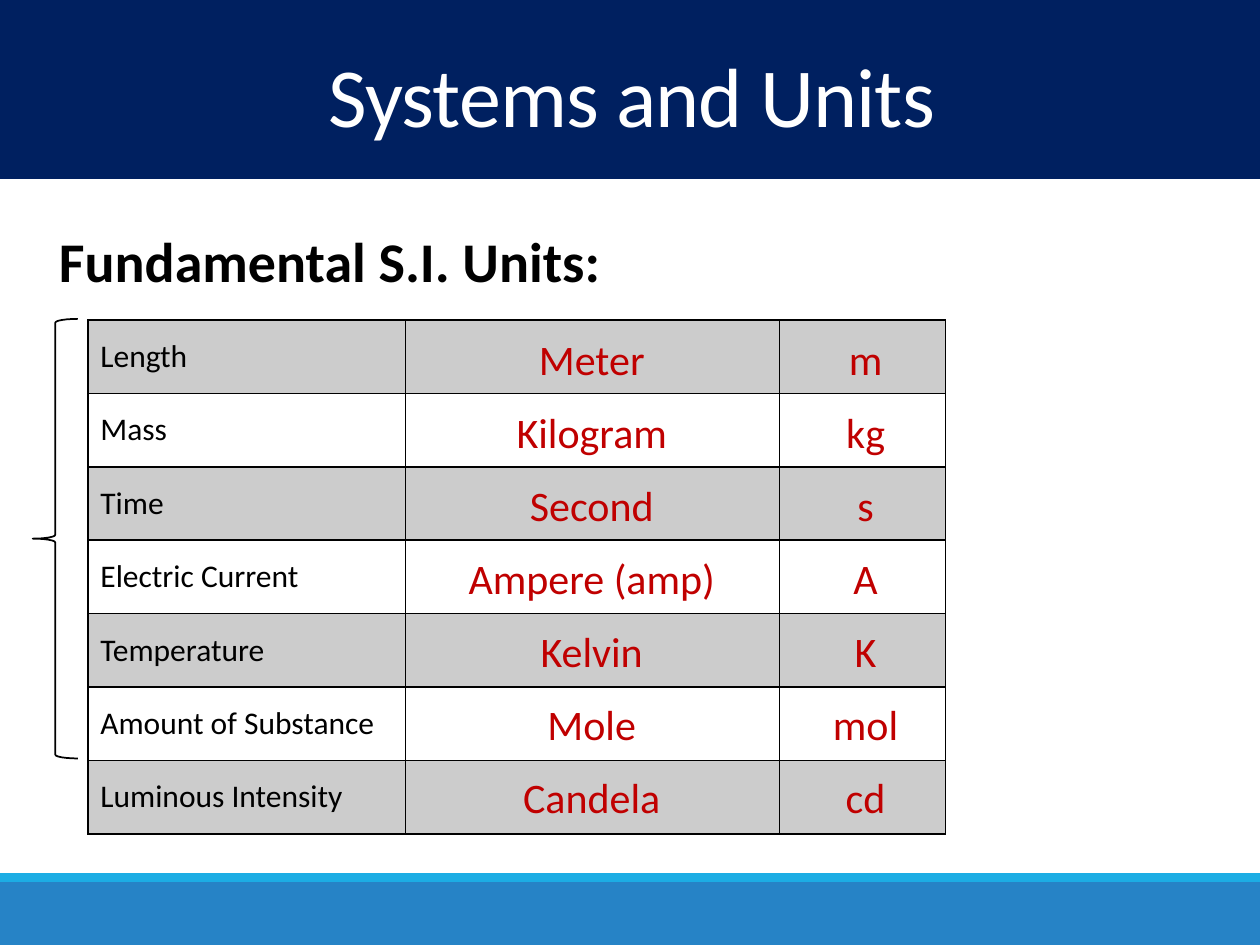
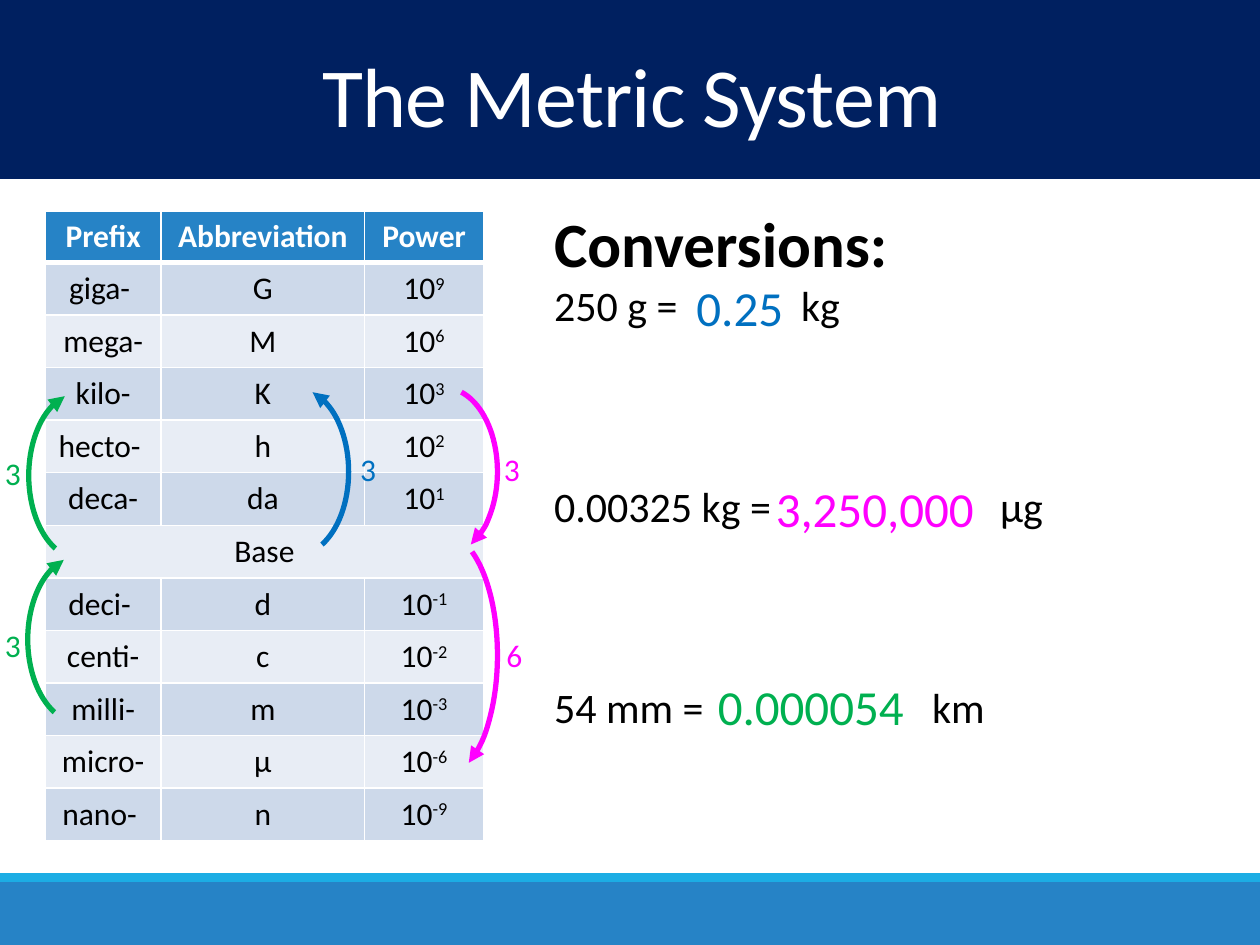
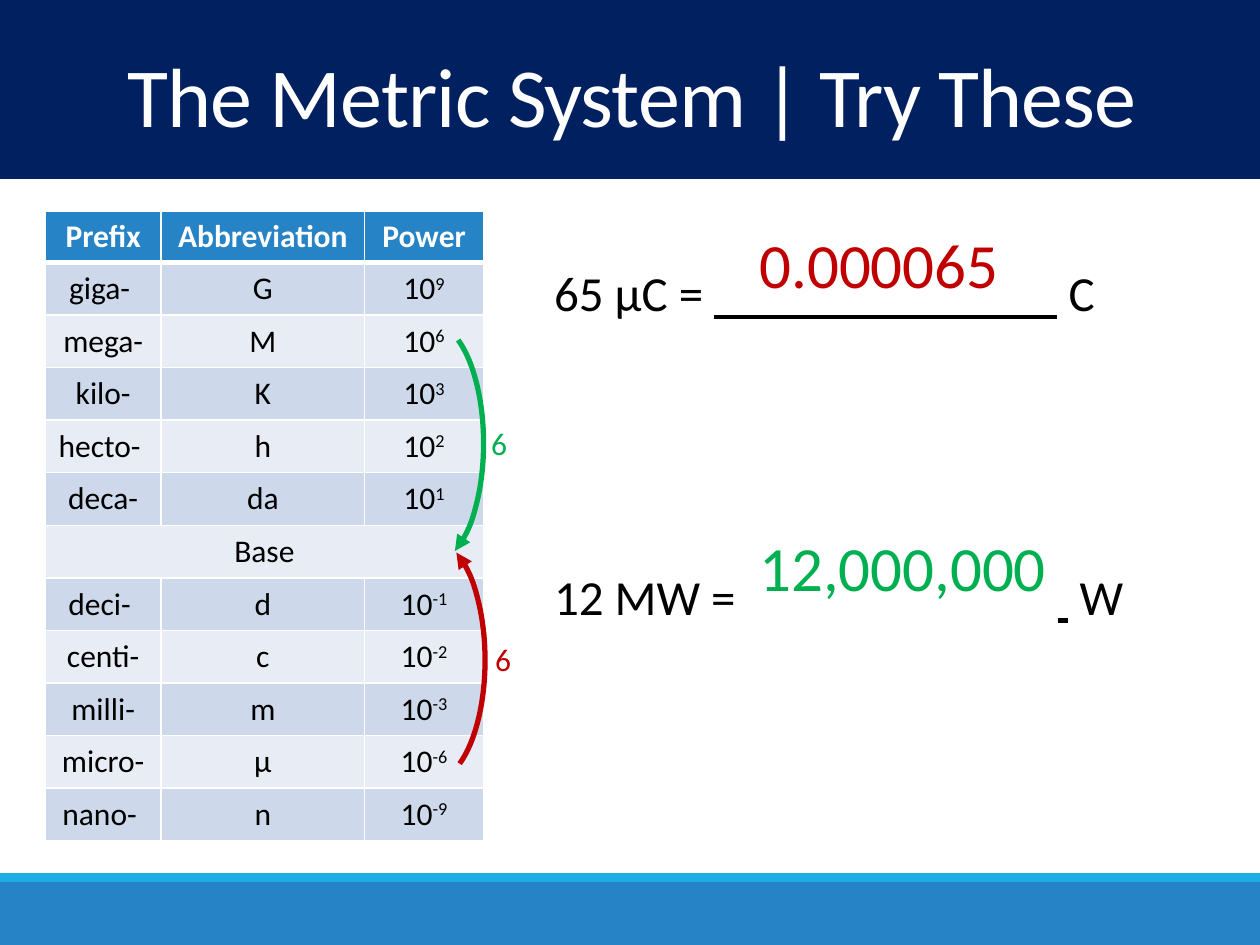
from dataclasses import dataclass

from lxml import etree
from pptx import Presentation
from pptx.dml.color import RGBColor
from pptx.enum.shapes import MSO_CONNECTOR, MSO_SHAPE
from pptx.enum.text import MSO_ANCHOR, MSO_AUTO_SIZE, PP_ALIGN
from pptx.oxml.ns import qn
from pptx.util import Cm, Pt

RECT, ARC, BRACE = MSO_SHAPE.RECTANGLE, MSO_SHAPE.ARC, MSO_SHAPE.LEFT_BRACE
STRAIGHT = MSO_CONNECTOR.STRAIGHT
LEFT, CENTER = PP_ALIGN.LEFT, PP_ALIGN.CENTER
MIDDLE = MSO_ANCHOR.MIDDLE
NO_FIT = MSO_AUTO_SIZE.NONE


@dataclass(frozen=True)
class Theme:
    font: str = "Calibri"
    navy: str = "002060"
    band: str = "2683C6"
    accent: str = "1CADE4"
    black: str = "000000"
    white: str = "FFFFFF"
    gray: str = "CCCCCC"
    row_dark: str = "CDD9EA"
    row_light: str = "E8EDF5"
    red: str = "C00000"
    blue: str = "0070C0"
    magenta: str = "FF00FF"
    green: str = "00B050"
    title: int = 48
    large: int = 36
    heading: int = 32
    equation: int = 28
    body: int = 24
    small: int = 18


T = Theme()


def write(p, text, size=T.small, color=T.black, bold=False, underline=False, **attrs):
    """Add a run to p; attrs are raw run attributes such as spc or baseline."""
    r = p.add_run()
    r.text = text
    r.font.name, r.font.size = T.font, Pt(size)
    r.font.bold, r.font.underline = bold, underline
    r.font.color.rgb = RGBColor.from_string(color)
    for name, value in attrs.items():
        r.font._element.set(name, value)


def add_text(slide, text, left, top, width, height, align=LEFT, **fmt):
    """Add a text box, sizes in centimetres, and return its text frame."""
    tf = slide.shapes.add_textbox(Cm(left), Cm(top), Cm(width), Cm(height)).text_frame
    tf.word_wrap = False
    p = tf.paragraphs[0]
    p.alignment = align
    write(p, text, **fmt)
    return tf


prs = Presentation()
prs.slide_width, prs.slide_height = Cm(25.4), Cm(19.05)
title_only = prs.slide_layouts[5]

# Slides and titles
slides = []
for title in ("Systems and Units", "The Metric System", "The Metric System | Try These"):
    slide = prs.slides.add_slide(title_only)
    sp = slide.shapes.title
    sp.left, sp.top, sp.width, sp.height = Cm(0.08), Cm(0.99), Cm(25.32), Cm(2.13)
    tf = sp.text_frame
    tf.auto_size, tf.vertical_anchor = NO_FIT, MIDDLE
    p = tf.paragraphs[0]
    p.alignment, p.line_spacing = CENTER, 0.85
    write(p, title, size=T.title, color=T.white, spc="-50")
    slides.append(slide)
units, metric, practice = slides

# Shared bands belong to the master, behind its placeholders
for i, (top, height, color) in enumerate(((17.78, 1.27, T.band), (17.6, 0.18, T.accent),
                                          (0, 3.61, T.navy))):
    sp = units.shapes.add_shape(RECT, 0, Cm(top), prs.slide_width, Cm(height))
    sp.shadow.inherit = False
    sp.fill.solid()
    sp.fill.fore_color.rgb = RGBColor.from_string(color)
    sp.line.fill.background()
    prs.slide_master.element.cSld.spTree.insert(2 + i, sp.element)

# Tables
# Each base unit: quantity, unit, unit width, symbol, symbol width
BASE_UNITS = [
    ("Length", "Meter", 2.77, "m", 1.24),
    ("Mass", "Kilogram", 3.91, "kg", 1.45),
    ("Time", "Second", 3.3, "s", 0.86),
    ("Electric Current", "Ampere (amp)", 5.92, "A", 1.07),
    ("Temperature", "Kelvin", 2.77, "K", 1.02),
    ("Amount of Substance", "Mole", 2.44, "mol", 1.96),
    ("Luminous Intensity", "Candela", 3.56, "cd", 1.42),
]
PREFIXES = [
    ("Prefix", "Abbreviation", "Power"),
    ("giga- ", "G", "10^9"), ("mega-", "M", "10^6"), ("kilo-", "K", "10^3"),
    ("hecto- ", "h", "10^2"), ("deca-", "da", "10^1"), ("Base",),
    ("deci- ", "d", "10^-1"), ("centi-", "c", "10^-2"), ("milli-", "m", "10^-3"),
    ("micro-", "μ", "10^-6"), ("nano- ", "n", "10^-9"),
]
quantities = [(row[0], "", "") for row in BASE_UNITS]
unit_grid = (quantities, 1.77, 6.45, (6.4, 7.54, 3.35), 1.48, LEFT, T.black,
             (T.gray, None), False)
prefix_grid = (PREFIXES, 0.91, 4.26, (2.34, 4.1, 2.4), 1.06, CENTER, T.white,
               (T.row_light, T.row_dark), True)

for slide, grid in ((units, unit_grid), (metric, prefix_grid), (practice, prefix_grid)):
    rows, left, top, widths, row_height, align, border, fills, has_header = grid
    table = slide.shapes.add_table(len(rows), len(widths), Cm(left), Cm(top),
                                   Cm(sum(widths)), Cm(row_height * len(rows))).table
    table.first_row = table.horz_banding = False
    for column, width in zip(table.columns, widths):
        column.width = Cm(width)
    for i, row in enumerate(rows):
        header = has_header and i == 0
        table.rows[i].height = Cm(row_height - 0.03 * header)
        fill = T.band if header else fills[i % 2]
        for j in range(len(widths)):
            cell = table.cell(i, j)
            cell.vertical_anchor = MIDDLE
            tcPr = cell._tc.get_or_add_tcPr()
            for side in ("lnL", "lnR", "lnT", "lnB"):
                weight = 3 if header and side == "lnB" else 1
                ln = etree.SubElement(tcPr, qn("a:" + side), w=str(Pt(weight)))
                solid = etree.SubElement(ln, qn("a:solidFill"))
                etree.SubElement(solid, qn("a:srgbClr"), val=border)
            if fill:
                cell.fill.solid()
                cell.fill.fore_color.rgb = RGBColor.from_string(fill)
            else:
                cell.fill.background()
        for j, text in enumerate(row):
            if not text:
                continue
            p = table.cell(i, j).text_frame.paragraphs[0]
            p.alignment = align
            base, _, power = text.partition("^")
            write(p, base, color=T.white if header else T.black, bold=header)
            if power:
                write(p, power, baseline="30000")
        if len(row) == 1:
            table.cell(i, 0).merge(table.cell(i, len(widths) - 1))

# Slide 1: heading, brace, units and symbols centred on their columns
add_text(units, "Fundamental S.I. Units:", 0.94, 4.45, 11.53, 1.63,
         size=T.heading, bold=True)
brace = units.shapes.add_shape(BRACE, Cm(0.66), Cm(6.43), Cm(0.91), Cm(8.86))
brace.shadow.inherit = False
brace.fill.background()
brace.line.width = Pt(1)
brace.line.color.rgb = RGBColor.from_string(T.black)
for i, (_, unit, unit_width, symbol, symbol_width) in enumerate(BASE_UNITS):
    for text, center, width in ((unit, 11.93, unit_width), (symbol, 17.45, symbol_width)):
        add_text(units, text, center - width / 2, 6.6 + 1.47 * i, width, 1.28,
                 align=CENTER, size=T.body, color=T.red)

# Slide 2: conversions, with a tab stop where each unit follows its answer
tf = add_text(metric, "Conversions:", 10.92, 3.99, 12.85, 14.1, size=T.large, bold=True)
tf.word_wrap = True
tabbed = []
for text, gap, tab in (("250 g =\tkg", 0, 4.98), ("0.00325 kg =\tμg", 86, 8.99),
                       ("54 mm =\tkm", 86, 7.62)):
    p = tf.add_paragraph()
    p.space_before = Pt(gap)
    write(p, text, size=T.body)
    tabbed.append((p, tab))

# Slide 3: equations with blanks
blank_end = 10.15
for text, unit, top in (("65 μC =\t", " C", 3.99), ("12 MW =\t", " W", 10.11)):
    p = add_text(practice, text, 10.92, top, 13.87, 2.31, size=T.equation).paragraphs[0]
    p.line_spacing = 2.0
    if unit == " W":
        write(p, " ", size=T.equation, underline=True)
    write(p, unit, size=T.equation)
    tabbed.append((p, blank_end))
blank = practice.shapes.add_connector(STRAIGHT, Cm(14.39), Cm(6.39), Cm(21.31), Cm(6.39))
blank.line.width = Pt(2.25)
blank.line.color.rgb = RGBColor.from_string(T.black)
etree.SubElement(blank.element.spPr, qn("a:effectLst"))

for p, tab in tabbed:
    tabs = etree.SubElement(p._p.get_or_add_pPr(), qn("a:tabLst"))
    etree.SubElement(tabs, qn("a:tab"), pos=str(Cm(tab)), algn="l")

# Answers
for slide, text, left, top, width, height, size, color in (
        (metric, "0.25", 13.79, 5.46, 2.34, 1.45, T.equation, T.blue),
        (metric, "3,250,000", 15.39, 9.53, 4.72, 1.45, T.equation, T.magenta),
        (metric, "0.000054", 14.22, 13.51, 4.5, 1.45, T.equation, T.green),
        (practice, "0.000065", 15.06, 4.42, 5.61, 1.8, T.large, T.red),
        (practice, "12,000,000", 15.06, 10.52, 6.58, 1.8, T.large, T.green)):
    add_text(slide, text, left, top, width, height, size=size, color=color)

# Curved arrows over the prefix table, each with its number of decimal places
SHORT = (3.38, 281.9, 70.26)   # height, start and end angle in degrees
LONG = (4.88, 284.85, 77.34)
for slide, color, left, top, arc, arrow, flip, places, label_left, label_top in (
        (metric, T.blue, 4.9, 7.82, SHORT, "headEnd", None, "3", 7.01, 8.94),
        (metric, T.magenta, 7.9, 7.82, SHORT, "tailEnd", None, "3", 9.91, 8.94),
        (metric, T.magenta, 7.9, 10.77, LONG, "tailEnd", None, "6", 9.96, 12.7),
        (metric, T.green, 0.58, 7.9, SHORT, "headEnd", "flipH", "3", -0.15, 9.02),
        (metric, T.green, 0.56, 11.2, SHORT, "headEnd", "flipH", "3", -0.15, 12.5),
        (practice, T.green, 7.62, 6.5, LONG, "tailEnd", None, "6", 9.65, 8.43),
        (practice, T.red, 7.65, 10.87, LONG, "tailEnd", "flipV", "6", 9.73, 12.78)):
    height, start, end = arc
    sp = slide.shapes.add_shape(ARC, Cm(left), Cm(top), Cm(2.13), Cm(height))
    sp.shadow.inherit = False
    # Angles count 60000 to the degree, adjustments 100000 to the unit
    sp.adjustments[0], sp.adjustments[1] = start * 0.6, end * 0.6
    sp.fill.background()
    sp.line.width = Pt(3)
    sp.line.color.rgb = RGBColor.from_string(color)
    etree.SubElement(sp.element.spPr.find(qn("a:ln")), qn("a:" + arrow), type="triangle")
    if flip:
        sp.element.spPr.find(qn("a:xfrm")).set(flip, "1")
    add_text(slide, places, label_left, label_top, 0.86, 1.02, color=color)

prs.save("out.pptx")
